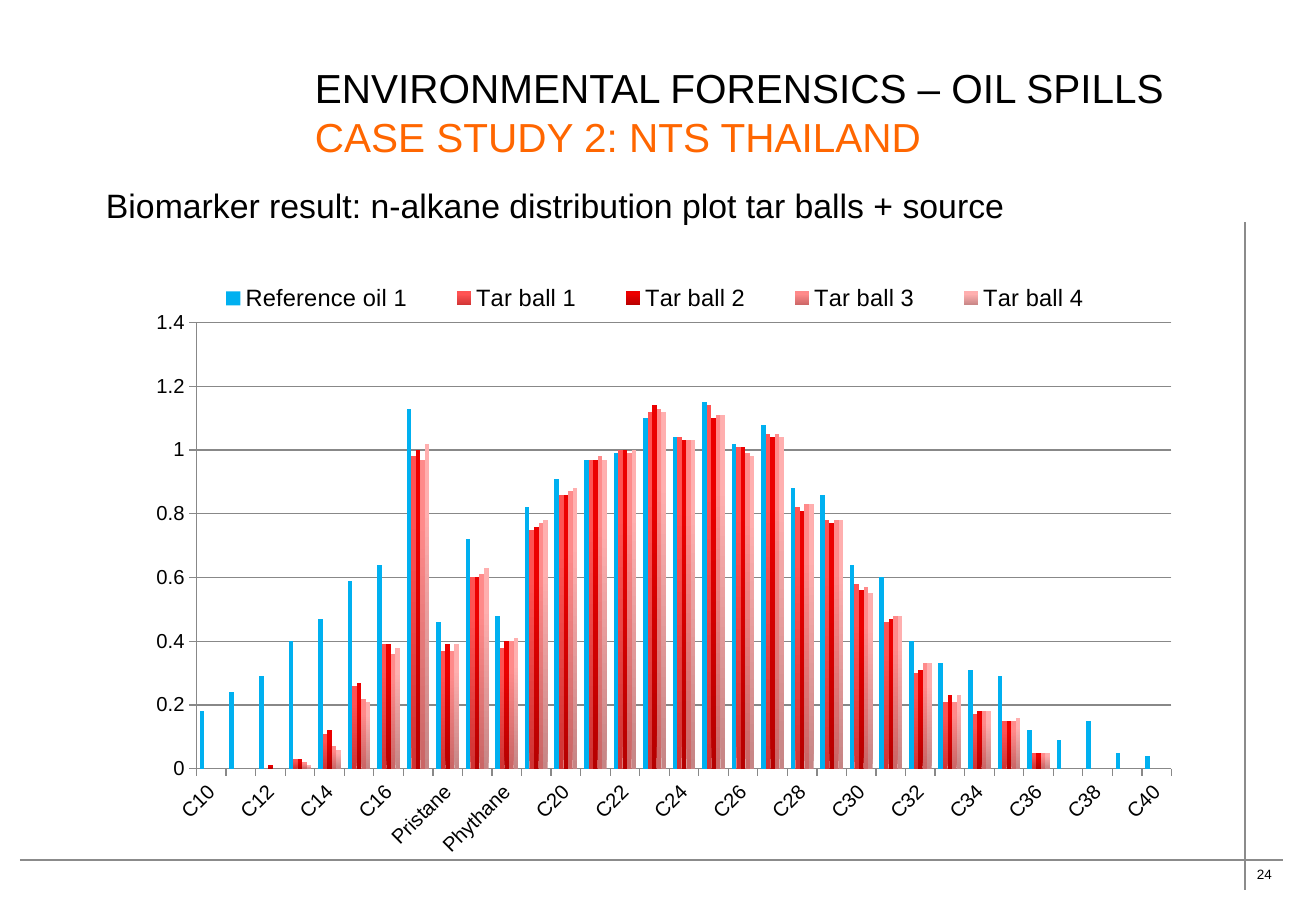
from lxml import etree
from pptx import Presentation
from pptx.chart.data import CategoryChartData
from pptx.dml.color import RGBColor
from pptx.enum.chart import XL_CHART_TYPE, XL_LEGEND_POSITION, XL_TICK_MARK
from pptx.enum.shapes import MSO_CONNECTOR
from pptx.enum.text import MSO_ANCHOR
from pptx.oxml import parse_xml
from pptx.oxml.ns import nsdecls, qn
from pptx.util import Pt

PX = 7526


def rgb(color):
    return RGBColor.from_string(color)


def set_layout(parent, index, x, y, w, h, target=""):
    for old in parent.findall(qn("c:layout")):
        parent.remove(old)
    parent.insert(index, parse_xml(
        f'<c:layout {nsdecls("c")}><c:manualLayout>{target}'
        '<c:xMode val="edge"/><c:yMode val="edge"/>'
        f'<c:x val="{x}"/><c:y val="{y}"/><c:w val="{w}"/><c:h val="{h}"/>'
        '</c:manualLayout></c:layout>'))


prs = Presentation()
prs.slide_width, prs.slide_height = 1316 * PX, 911 * PX
s = prs.slides.add_slide(prs.slide_layouts[6])

for x1, y1, x2, y2 in [(20, 860, 1283, 860), (1245, 890, 1245, 222)]:
    line = s.shapes.add_connector(
        MSO_CONNECTOR.STRAIGHT, x1 * PX, y1 * PX, x2 * PX, y2 * PX)
    line.line.color.rgb = rgb("8B8B8B")
    line.line.width = Pt(1)
    etree.SubElement(line._element.spPr, qn("a:effectLst"))

texts = [
    ((1245, 860, 41, 28), 8, False, MSO_ANCHOR.TOP, [("24", "000000")]),
    ((94, 179, 1114, 60), 20, True, MSO_ANCHOR.TOP,
     [("Biomarker result: n-alkane distribution plot tar balls + source", "000000")]),
    ((303, 51, 920, 122), 24, True, MSO_ANCHOR.MIDDLE,
     [("ENVIRONMENTAL FORENSICS – OIL SPILLS", "000000"),
      ("CASE STUDY 2: NTS THAILAND", "FF6600")]),
]
for box, size, wrap, anchor, lines in texts:
    tf = s.shapes.add_textbox(*[v * PX for v in box]).text_frame
    tf.word_wrap = wrap
    tf.vertical_anchor = anchor
    for i, (text, color) in enumerate(lines):
        p = tf.add_paragraph() if i else tf.paragraphs[0]
        p.text = text
        p.font.name = "Arial"
        p.font.size = Pt(size)
        p.font.color.rgb = rgb(color)

series = [
    ("Reference oil 1", ["00B0F0"],
     [0.18, 0.24, 0.29, 0.4, 0.47, 0.59, 0.64, 1.13, 0.46, 0.72, 0.48,
      0.82, 0.91, 0.97, 0.99, 1.1, 1.04, 1.15, 1.02, 1.08, 0.88, 0.86,
      0.64, 0.6, 0.4, 0.33, 0.31, 0.29, 0.12, 0.09, 0.15, 0.05, 0.04]),
    ("Tar ball 1", ["D03434", "FF5353"],
     [0, 0, 0, 0.03, 0.11, 0.26, 0.39, 0.98, 0.37, 0.6, 0.38,
      0.75, 0.86, 0.97, 1, 1.12, 1.04, 1.14, 1.01, 1.05, 0.82, 0.78,
      0.58, 0.46, 0.3, 0.21, 0.17, 0.15, 0.05, 0, 0, 0, 0]),
    ("Tar ball 2", ["B60000", "EC0000"],
     [0, 0, 0.01, 0.03, 0.12, 0.27, 0.39, 1, 0.39, 0.6, 0.4,
      0.76, 0.86, 0.97, 1, 1.14, 1.03, 1.1, 1.01, 1.04, 0.81, 0.77,
      0.56, 0.47, 0.31, 0.23, 0.18, 0.15, 0.05, 0, 0, 0, 0]),
    ("Tar ball 3", ["CA6565", "FF8A8A"],
     [0, 0, 0, 0.02, 0.07, 0.22, 0.36, 0.97, 0.37, 0.61, 0.4,
      0.77, 0.87, 0.98, 0.99, 1.13, 1.03, 1.11, 0.99, 1.05, 0.83, 0.78,
      0.57, 0.48, 0.33, 0.21, 0.18, 0.15, 0.05, 0, 0, 0, None]),
    ("Tar ball 4", ["C68585", "FFAFAF"],
     [0, 0, 0, 0.01, 0.06, 0.21, 0.38, 1.02, 0.39, 0.63, 0.41,
      0.78, 0.88, 0.97, 1, 1.12, 1.03, 1.11, 0.98, 1.04, 0.83, 0.78,
      0.55, 0.48, 0.33, 0.23, 0.18, 0.16, 0.05, 0, 0, 0, 0]),
]
data = CategoryChartData()
data.categories = (
    [f"C{n}" for n in range(10, 18)] + ["Pristane", "C18", "Phythane"]
    + [f"C{n}" for n in range(19, 41)])
for name, colors, values in series:
    data.add_series(name, values)
chart = s.shapes.add_chart(
    XL_CHART_TYPE.COLUMN_CLUSTERED,
    109 * PX, 265 * PX, 1081 * PX, 607 * PX, data).chart
chart.has_title = False
chart.font.name = "Arial"
chart.font.size = Pt(18)
chart.font.color.rgb = rgb("000000")

plot = chart.plots[0]
plot.gap_width = 150
plot.vary_by_categories = False
for ser, (name, colors, values) in zip(plot.series, series):
    fill = ser.format.fill
    ser.invert_if_negative = False
    if len(colors) == 1:
        fill.solid()
        fill.fore_color.rgb = rgb(colors[0])
    else:
        fill.gradient()
        fill.gradient_angle = 90
        for stop, color, position in zip(fill.gradient_stops, colors, (0, 0.8)):
            stop.color.rgb = rgb(color)
            stop.position = position

cat_axis, val_axis = chart.category_axis, chart.value_axis
val_axis.minimum_scale, val_axis.maximum_scale = 0, 1.4
val_axis.major_unit = 0.2
val_axis.has_major_gridlines = True
for axis in (cat_axis, val_axis):
    axis.major_tick_mark = XL_TICK_MARK.OUTSIDE
    axis.minor_tick_mark = XL_TICK_MARK.NONE
    labels = axis.tick_labels
    labels.number_format = "General"
    labels.number_format_is_linked = False
    labels.font.name = "Arial"
    labels.font.size = Pt(12)
    labels.font.color.rgb = rgb("000000")
for part in (cat_axis, val_axis, val_axis.major_gridlines):
    part.format.line.color.rgb = rgb("888888")
    part.format.line.width = Pt(0.75)
cat_axis._element.find(qn("c:txPr")).find(qn("a:bodyPr")).set("rot", "-2700000")
cat_axis._element.find(qn("c:noMultiLvlLbl")).addprevious(
    parse_xml(f'<c:tickLblSkip {nsdecls("c")} val="2"/>'))

chart.has_legend = True
legend = chart.legend
legend.position = XL_LEGEND_POSITION.TOP
legend.include_in_layout = False
legend.font.name = "Arial"
legend.font.size = Pt(14)
legend.font.color.rgb = rgb("000000")
set_layout(legend._element, 1, 0.07, 0.03, 0.87, 0.05)
plot_area = chart._chartSpace.chart.plotArea
set_layout(plot_area, 0, 0.081, 0.095, 0.902, 0.735,
           '<c:layoutTarget val="inner"/>')

prs.save("out.pptx")
